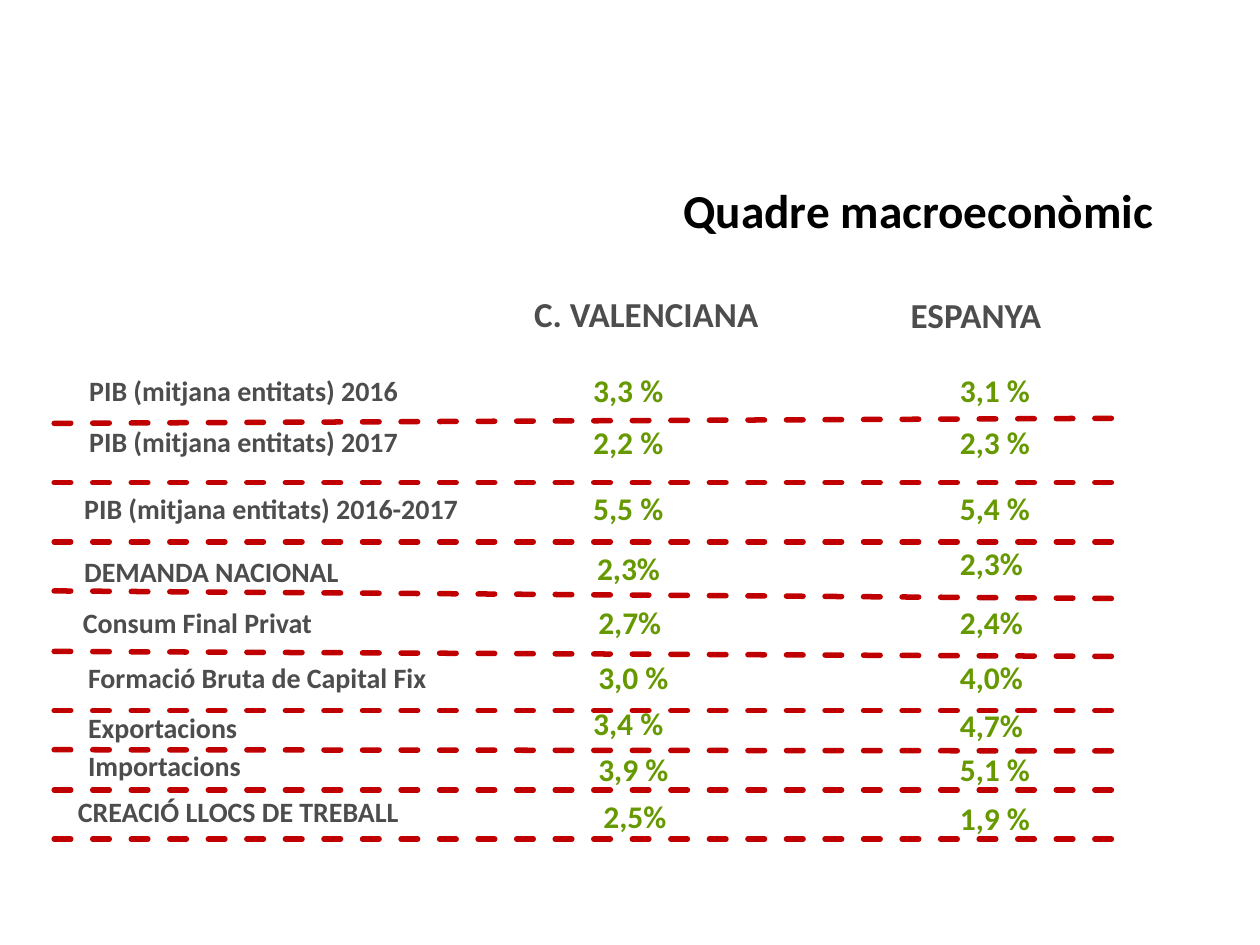
from lxml import etree
from pptx import Presentation
from pptx.dml.color import RGBColor
from pptx.enum.dml import MSO_LINE
from pptx.enum.shapes import MSO_CONNECTOR
from pptx.enum.text import MSO_ANCHOR, PP_ALIGN
from pptx.util import Inches, Pt

STRAIGHT = MSO_CONNECTOR.STRAIGHT
DASH = MSO_LINE.DASH
TOP, MIDDLE = MSO_ANCHOR.TOP, MSO_ANCHOR.MIDDLE
LEFT, RIGHT = PP_ALIGN.LEFT, PP_ALIGN.RIGHT
FONT = "Calibri"
COLOURS = {"title": "000000", "label": "4D4D4D", "value": "669900", "rule": "C00000"}

TITLE = "Quadre macroeconòmic"
HEADERS = [("C. VALENCIANA", 4.14, 2.3), ("ESPANYA", 7.13, 2.31)]

# Each row: (text, left, centre) for the label, C. Valenciana and Espanya
ROWS = [
    [("PIB (mitjana entitats) 2016", 0.61, 3.1), ("3,3 %", 4.61, 3.1), ("3,1 %", 7.52, 3.1)],
    [("PIB (mitjana entitats) 2017", 0.61, 3.51), ("2,2 %", 4.61, 3.51), ("2,3 %", 7.52, 3.51)],
    [("PIB (mitjana entitats) 2016-2017", 0.57, 4.04), ("5,5 %", 4.61, 4.04), ("5,4 %", 7.52, 4.04)],
    [("DEMANDA NACIONAL", 0.57, 4.54), ("2,3%", 4.64, 4.51), ("2,3%", 7.52, 4.47)],
    [("Consum Final Privat", 0.56, 4.94), ("2,7%", 4.65, 4.94), ("2,4%", 7.52, 4.94)],
    [("Formació Bruta de Capital Fix", 0.6, 5.38), ("3,0 %", 4.65, 5.38), ("4,0%", 7.52, 5.38)],
    [("Exportacions", 0.6, 5.78), ("3,4 %", 4.61, 5.74), ("4,7%", 7.52, 5.76)],
    [("Importacions", 0.6, 6.08), ("3,9 %", 4.65, 6.11), ("5,1 %", 7.52, 6.11)],
    [("CREACIÓ LLOCS DE TREBALL", 0.52, 6.44), ("2,5%", 4.69, 6.48), ("1,9 %", 7.52, 6.5)],
]
COLUMNS = [(3.31, 16, "label"), (2.36, 18, "value"), (2.36, 18, "value")]
ROW_HEIGHT = 0.51

RULE_LEFT, RULE_RIGHT = 0.43, 8.86
RULES = [(3.36, 3.32), (3.83, 3.83), (4.3, 4.3), (4.69, 4.75), (5.17, 5.21),
         (5.64, 5.64), (5.95, 5.96), (6.27, 6.27), (6.66, 6.66)]


def add_text(page, text, left, top, width, height, size, colour,
             align=LEFT, anchor=MIDDLE, spacing=0.93, inset_top=0.07):
    box = page.shapes.add_textbox(*map(Inches, (left, top, width, height)))
    frame = box.text_frame
    frame.word_wrap = True
    frame.vertical_anchor = anchor
    frame.margin_top = Inches(inset_top)
    frame.text = text
    para = frame.paragraphs[0]
    para.alignment = align
    para.line_spacing = spacing
    font = para.runs[0].font
    font.name, font.size, font.bold = FONT, Pt(size), True
    font.color.rgb = RGBColor.from_string(COLOURS[colour])


def add_rule(page, start, end):
    """Draw a dashed row separator with round dash ends."""
    rule = page.shapes.add_connector(
        STRAIGHT, *map(Inches, (RULE_LEFT, start, RULE_RIGHT, end)))
    rule.line.color.rgb = RGBColor.from_string(COLOURS["rule"])
    rule.line.width = Pt(3.15)
    rule.line.dash_style = DASH
    properties = rule.line._get_or_add_ln()
    properties.set("cap", "rnd")
    namespace = properties.nsmap["a"]
    etree.SubElement(properties.getparent(), f"{{{namespace}}}effectLst")


def main():
    deck = Presentation()
    deck.slide_width, deck.slide_height = Inches(10), Inches(7.5)
    page = deck.slides.add_slide(deck.slide_layouts[6])

    for start, end in RULES:
        add_rule(page, start, end)
    add_text(page, TITLE, 5.16, 1.39, 4.09, 0.55, 27, "title",
             align=RIGHT, anchor=TOP, spacing=1.0, inset_top=0.05)
    for text, left, top in HEADERS:
        add_text(page, text, left, top, 2.83, 0.58, 20, "label",
                 anchor=TOP, inset_top=0.05)
    for row in ROWS:
        for (text, left, centre), (width, size, colour) in zip(row, COLUMNS):
            add_text(page, text, left, centre - ROW_HEIGHT / 2, width, ROW_HEIGHT,
                     size, colour)
    deck.save("out.pptx")


if __name__ == "__main__":
    main()
